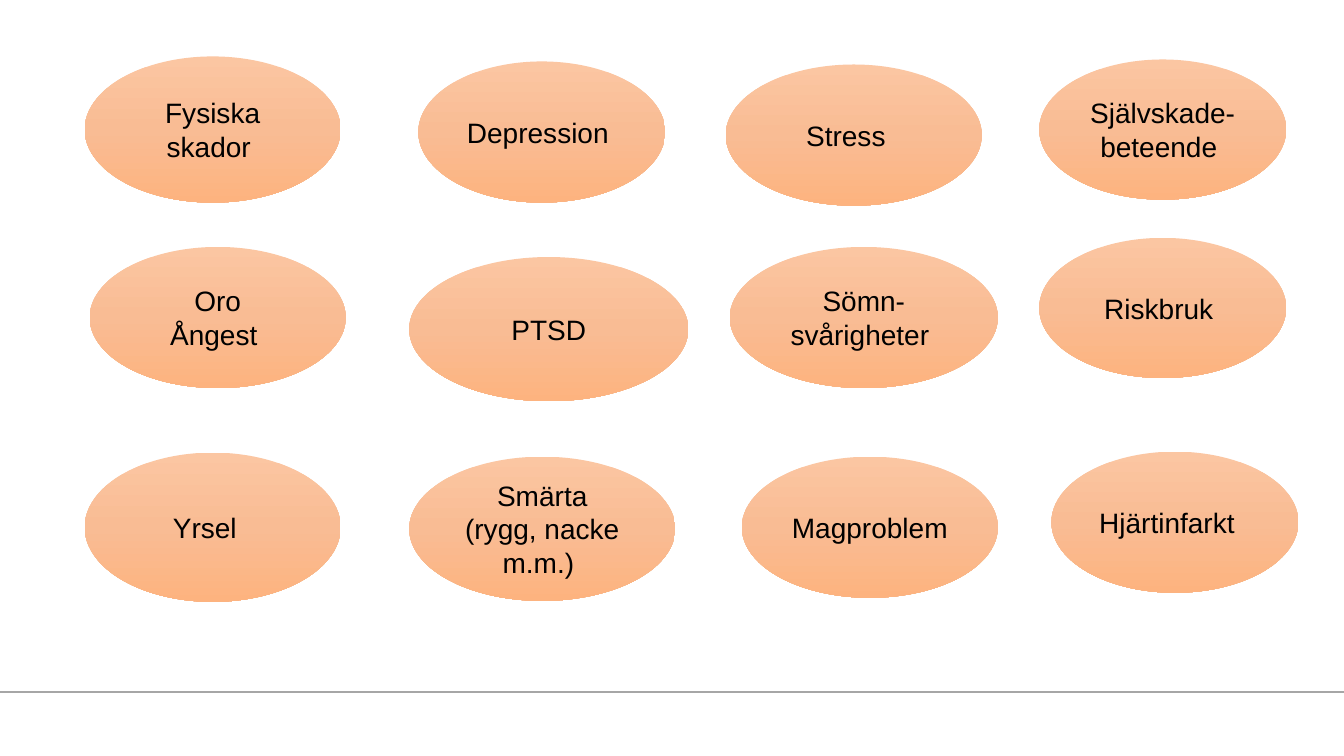
from copy import deepcopy

from pptx import Presentation
from pptx import util as u
from pptx.dml import color
from pptx.enum import shapes, text
from pptx.oxml import ns, xmlchemy

SHADES = (0, "FBC6A2"), (0.5, "F9BC94"), (1, "FDB37F")
LEAN = 5.56

OVALS = [
    ("Fysiska skador ", 60.5, 40.3, 182.9, 104.4, 0),
    ("Oro\nÅngest ", 64.1, 176.4, 182.9, 100.8, 0),
    ("Stress ", 518.4, 46.1, 182.9, 100.8, LEAN),
    ("Sömn-\nsvårigheter ", 521.3, 176.4, 191.5, 100.8, 0),
    ("Riskbruk ", 742.3, 169.9, 176.4, 100.1, 0),
    ("Magproblem ", 529.9, 326.2, 182.9, 100.8, 0),
    ("Självskade-beteende ", 742.3, 42.5, 176.4, 100.1, 0),
    ("Yrsel ", 60.5, 323.3, 182.9, 106.6, LEAN),
    ("Depression ", 298.8, 43.9, 176.4, 100.8, 0),
    ("Hjärtinfarkt ", 751, 322.6, 176.4, 100.8, LEAN),
    ("Smärta (rygg, nacke m.m.) ", 292.3, 326.2, 190.1, 103, 0),
    ("PTSD", 292.3, 183.6, 199.4, 103, 0),
]


def paint(code):
    """Turn a hex string into a colour."""
    return color.RGBColor.from_string(code)


def write(frame, words, size=20, font="Arial", ink="000000", lean=0):
    """Set centred text, one paragraph a line, with extra room on the right."""
    frame.word_wrap = True
    frame.vertical_anchor = text.MSO_ANCHOR.MIDDLE
    frame.margin_right = u.Pt(7.2 + lean)
    frame.text = words
    for para in frame.paragraphs:
        para.alignment = text.PP_ALIGN.CENTER
        para.font.size = u.Pt(size)
        para.font.name = font
        for run in para.runs:
            run.font.size = u.Pt(size)
            run.font.name = font
            run.font.color.rgb = paint(ink)


def shade(shape):
    """Fill a shape with the three-stop gradient from top to bottom."""
    shape.fill.gradient()
    shape.fill.gradient_angle = 270
    first = next(shape.element.iter(ns.qn("a:gs")))
    first.addnext(deepcopy(first))
    for stop, (place, code) in zip(shape.fill.gradient_stops, SHADES):
        stop.position = place
        stop.color.rgb = paint(code)


def oval(slide, words, left, top, width, height, lean):
    """Add a shaded ellipse with its label."""
    box = map(u.Pt, (left, top, width, height))
    shape = slide.shapes.add_shape(shapes.MSO_SHAPE.OVAL, *box)
    shape.shadow.inherit = False
    shape.line.fill.background()
    shade(shape)
    write(shape.text_frame, words, lean=lean)


def rule(slide, top, width, code, weight):
    """Add a level line across the slide."""
    line = slide.shapes.add_connector(
        shapes.MSO_CONNECTOR.STRAIGHT, 0, u.Pt(top), width, u.Pt(top))
    line.line.color.rgb = paint(code)
    line.line.width = u.Pt(weight)
    line.element.spPr.append(xmlchemy.OxmlElement("a:effectLst"))


def main():
    """Build and save the slide."""
    deck = Presentation()
    deck.slide_width, deck.slide_height = u.Pt(960), u.Pt(540)
    slide = deck.slides.add_slide(deck.slide_layouts[6])
    rule(slide, 494.6, deck.slide_width, "A6A6A6", 1.5)
    for item in OVALS:
        oval(slide, *item)
    deck.save("out.pptx")


if __name__ == "__main__":
    main()
